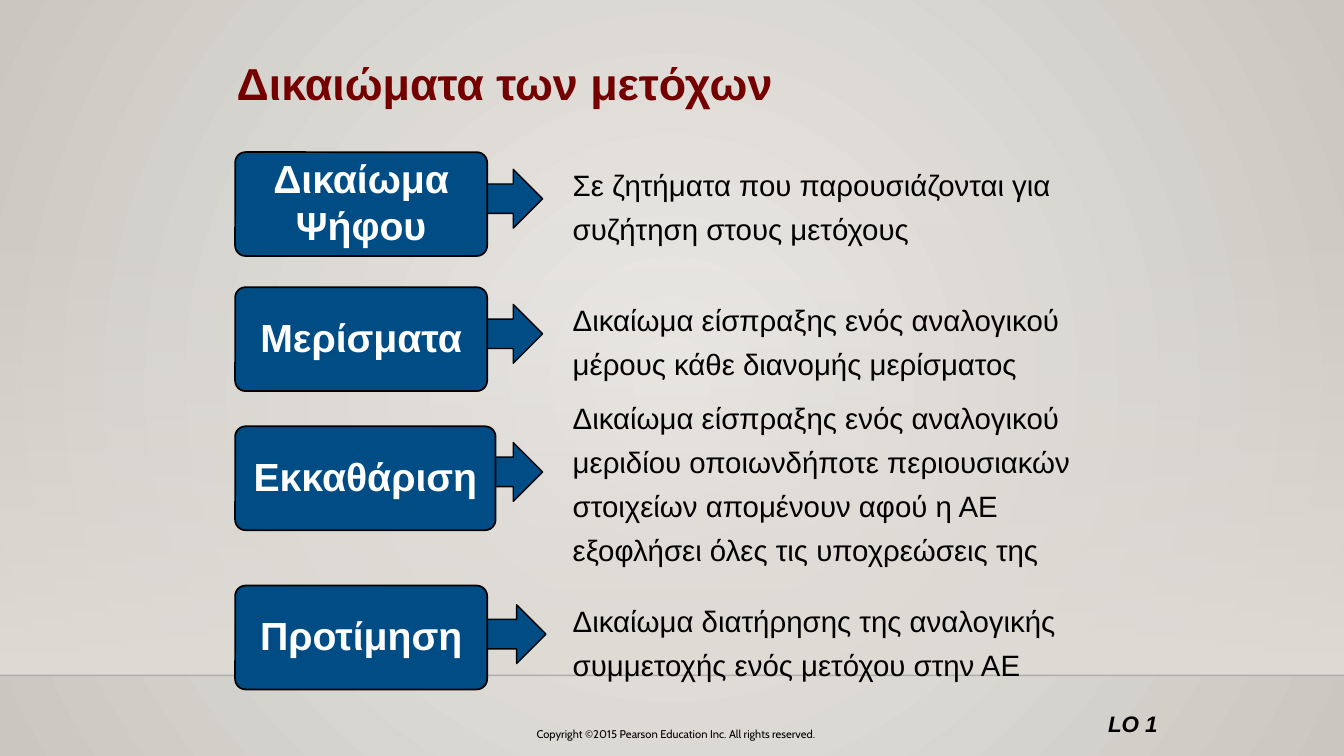
from dataclasses import dataclass

from lxml import etree
from pptx import Presentation
from pptx.dml.color import RGBColor
from pptx.dml.fill import FillFormat
from pptx.enum.shapes import MSO_CONNECTOR as CONN, MSO_SHAPE as SHAPE
from pptx.enum.text import MSO_ANCHOR as ANCHOR, PP_ALIGN as ALIGN
from pptx.oxml.ns import qn
from pptx.util import Emu, Inches, Pt

COLORS = {
    "light": "ECEAE7", "edge": "CAC7C1", "floor": "DFDBD5", "horizon": "000001",
    "box": "004D86", "title": "740000", "black": "000000", "white": "FFFFFF",
}
COLS, ROWS = 160, 90
TEXT_COL, TEXT_COLS = 67, 65
BOX_COL, BOX_ROWS, ARROW_SIZE = 28, 12.36, 7
HORIZON_ROW = 80.4


@dataclass
class Right:
    name: str
    text: str
    box_row: float
    text_row: float
    arrow_row: float
    text_rows: float = 11.3
    box_cols: float = 30
    arrow_col: float = 57.6


RIGHTS = [
    Right("Δικαίωμα Ψήφου",
          "Σε ζητήματα που παρουσιάζονται για συζήτηση στους μετόχους",
          18.12, 18.24, 20.16),
    Right("Μερίσματα",
          "Δικαίωμα είσπραξης ενός αναλογικού μέρους κάθε διανομής μερίσματος",
          34.2, 34.32, 36.24),
    Right("Εκκαθάριση",
          "Δικαίωμα είσπραξης ενός αναλογικού μεριδίου οποιωνδήποτε περιουσιακών "
          "στοιχείων απομένουν αφού η ΑΕ εξοφλήσει όλες τις υποχρεώσεις της",
          50.76, 45.96, 52.68, text_rows=22.3, box_cols=31),
    Right("Προτίμηση",
          "Δικαίωμα διατήρησης της αναλογικής συμμετοχής ενός μετόχου στην ΑΕ",
          69.72, 70.2, 72, arrow_col=58),
]

prs = Presentation()
prs.slide_width, prs.slide_height = Inches(13.33), Inches(7.5)
s = prs.slides.add_slide(prs.slide_layouts[6])


def rgb(name: str) -> RGBColor:
    return RGBColor.from_string(COLORS[name])


def x(cols: float) -> Emu:
    return Emu(round(prs.slide_width * cols / COLS))


def y(rows: float) -> Emu:
    return Emu(round(prs.slide_height * rows / ROWS))


def area(col: float, row: float, cols: float, rows: float) -> tuple[Emu, ...]:
    return x(col), y(row), x(cols), y(rows)


def set_alpha(color, percent: int) -> None:
    etree.SubElement(color, qn("a:alpha")).set("val", str(percent * 1000))


def set_gradient(fill: FillFormat, start: str, end: str) -> None:
    fill.gradient()
    for stop, name in zip(fill.gradient_stops, (start, end)):
        stop.color.rgb = rgb(name)
    fill.gradient_stops[0].position, fill.gradient_stops[1].position = 0, 1


def write(tf, text: str, *, size: float, font: str = "Arial", color: str = "black",
          bold: bool = False, italic: bool = False, align=ALIGN.LEFT,
          spacing: float = 1.0) -> None:
    tf.word_wrap = True
    p = tf.paragraphs[0]
    p.alignment, p.line_spacing = align, spacing
    r = p.add_run()
    r.text = text
    r.font.name, r.font.size = font, Pt(size)
    r.font.bold, r.font.italic = bold, italic
    r.font.color.rgb = rgb(color)


def add_text(place: tuple[Emu, ...], text: str, **style) -> None:
    write(s.shapes.add_textbox(*place).text_frame, text, **style)


def add_block(kind: SHAPE, place: tuple[Emu, ...], line_width: float):
    sp = s.shapes.add_shape(kind, *place)
    sp.shadow.inherit = False
    sp.fill.solid()
    sp.fill.fore_color.rgb = rgb("box")
    sp.line.color.rgb = rgb("black")
    sp.line.width = Pt(line_width)
    return sp


def add_backdrop() -> None:
    """Radial background, floor fading in downwards, and the horizon line."""
    set_gradient(s.background.fill, "light", "edge")
    grad = next(s.element.iter(qn("a:gradFill")))
    grad.remove(grad.find(qn("a:lin")))
    radial = etree.SubElement(grad, qn("a:path"))
    radial.set("path", "circle")
    center = etree.SubElement(radial, qn("a:fillToRect"))
    for side in "ltrb":
        center.set(side, "50000")

    floor = s.shapes.add_shape(SHAPE.RECTANGLE, *area(0, 26.52, COLS, HORIZON_ROW - 26.52))
    floor.shadow.inherit = False
    floor.line.fill.background()
    set_gradient(floor.fill, "floor", "floor")
    floor.fill.gradient_angle = 270
    set_alpha(next(floor.element.iter(qn("a:srgbClr"))), 0)

    horizon = s.shapes.add_connector(CONN.STRAIGHT, 0, y(HORIZON_ROW), x(COLS), y(HORIZON_ROW))
    horizon.line.color.rgb = rgb("horizon")
    horizon.line.width = Pt(1)
    set_alpha(next(horizon.element.iter(qn("a:srgbClr"))), 20)
    etree.SubElement(horizon.element.spPr, qn("a:effectLst"))


def add_right(right: Right) -> None:
    add_block(SHAPE.RIGHT_ARROW,
              area(right.arrow_col, right.arrow_row, ARROW_SIZE, ARROW_SIZE), 1)
    add_text(area(TEXT_COL, right.text_row, TEXT_COLS, right.text_rows), right.text,
             size=21, spacing=1.25)
    box = add_block(SHAPE.ROUNDED_RECTANGLE,
                    area(BOX_COL, right.box_row, right.box_cols, BOX_ROWS), 1.25)
    box.adjustments[0] = 0.1
    tf = box.text_frame
    tf.vertical_anchor = ANCHOR.MIDDLE
    tf.margin_top, tf.margin_bottom = 0, Inches(0.05)
    write(tf, right.name, size=28, color="white", bold=True, align=ALIGN.CENTER)


add_backdrop()
add_text(area(27, 6, 109, 7.7), "Δικαιώματα των μετόχων", size=32, color="title", bold=True)
for right in RIGHTS:
    add_right(right)
add_text(area(129, 84, 10, 4.4), "LO 1", size=16, bold=True, italic=True, align=ALIGN.RIGHT)
add_text(area(52, 86, 57, 3), "Copyright ©2015 Pearson Education Inc. All rights reserved.",
         size=8, font="Cabin", align=ALIGN.CENTER)
prs.save("out.pptx")
